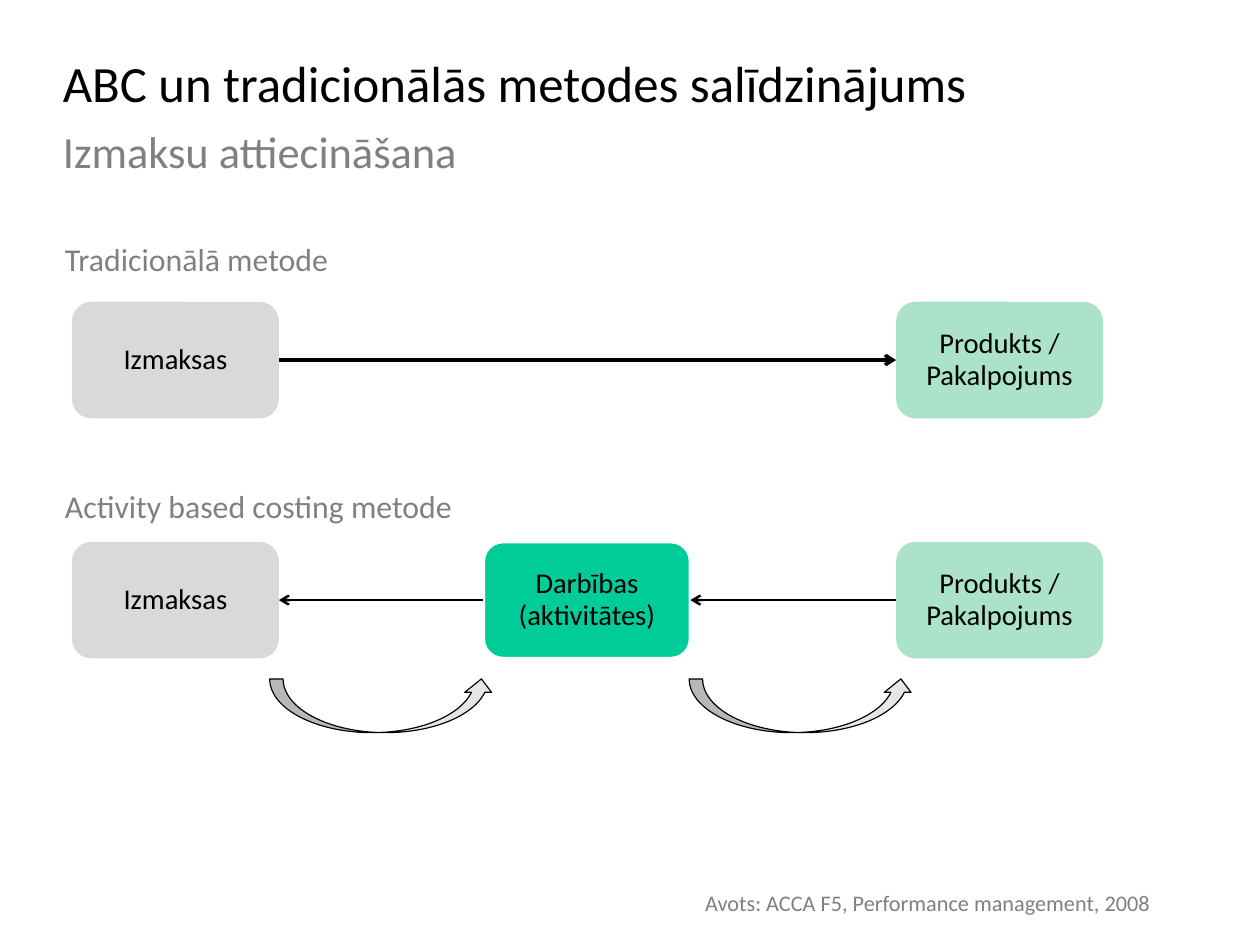
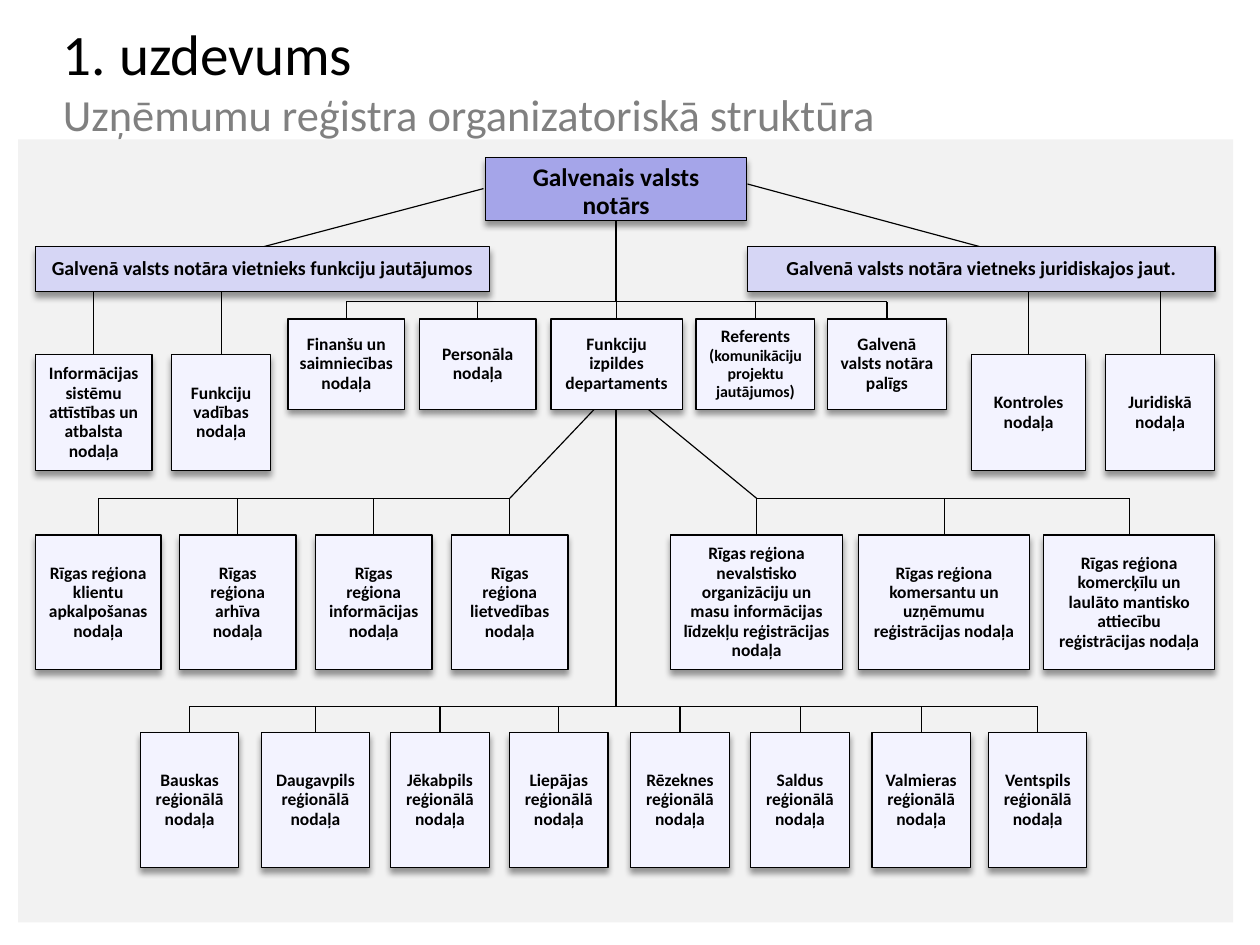
from lxml import etree
from pptx import Presentation
from pptx.dml.color import RGBColor
from pptx.enum.shapes import MSO_CONNECTOR, MSO_SHAPE
from pptx.enum.text import MSO_ANCHOR, MSO_AUTO_SIZE, PP_ALIGN
from pptx.oxml.ns import qn
from pptx.util import Inches, Pt

RECT, ROUNDED = MSO_SHAPE.RECTANGLE, MSO_SHAPE.ROUNDED_RECTANGLE
CURVED_ARROW = MSO_SHAPE.CURVED_UP_ARROW
STRAIGHT = MSO_CONNECTOR.STRAIGHT
MIDDLE, TOP = MSO_ANCHOR.MIDDLE, MSO_ANCHOR.TOP
LEFT, CENTER = PP_ALIGN.LEFT, PP_ALIGN.CENTER
NO_FIT = MSO_AUTO_SIZE.NONE

FONT = "Calibri"
CM_PER_INCH = 2.54
BLACK, WHITE, GREY = "000000", "FFFFFF", "808080"
COST, PRODUCT, ACTIVITY, CURVE = "D9D9D9", "AAE2CA", "00CC99", "E6E6E6"
PANEL, CHIEF, DEPUTY, UNIT = "F2F2F2", "A5A5E9", "D6D6F5", "F3F3FF"
LEFT_SITE, RIGHT_SITE = 1, 3


def rgb(value):
    """Return the colour for a hex string."""
    return RGBColor.from_string(value)


def style_runs(paragraph, size, color, bold=False):
    """Format every run of a paragraph."""
    for run in paragraph.runs:
        run.font.name = FONT
        run.font.size = Pt(size)
        run.font.bold = bold
        run.font.color.rgb = rgb(color)


def add_title(slide, heading, subheading, size, top, width, gap):
    """Fill the title placeholder with a heading and a grey subheading."""
    title = slide.shapes.title
    title.left, title.top = Inches(0.55), Inches(top)
    title.width, title.height = Inches(width), Inches(1.38)
    frame = title.text_frame
    frame.text = f"{heading}\n{subheading}"
    frame.auto_size, frame.vertical_anchor = NO_FIT, MIDDLE
    frame.margin_left = frame.margin_right = 0
    frame.margin_top = frame.margin_bottom = 0
    styles = ((size, BLACK, gap), (28, GREY, 6.6))
    for paragraph, (points, color, after) in zip(frame.paragraphs, styles):
        paragraph.alignment = LEFT
        paragraph.line_spacing = 1.01
        paragraph.space_after = Pt(after)
        style_runs(paragraph, points, color)
    return title


def add_caption(slide, text, left, top, width, size):
    """Add a grey line of text."""
    caption = slide.shapes.add_textbox(
        Inches(left), Inches(top), Inches(width), Inches(0.38))
    frame = caption.text_frame
    frame.word_wrap = True
    frame.text = text
    frame.paragraphs[0].line_spacing = 0.93
    style_runs(frame.paragraphs[0], size, GREY)


def add_block(slide, kind, area, fill, line=None, line_width=0.75):
    """Add a filled shape, outlined when a line colour is given."""
    block = slide.shapes.add_shape(kind, *map(Inches, area))
    block.shadow.inherit = False
    block.fill.solid()
    block.fill.fore_color.rgb = rgb(fill)
    if line:
        block.line.color.rgb = rgb(line)
        block.line.width = Pt(line_width)
    else:
        block.line.fill.background()
    return block


def label(block, text, size, bold=False, anchor=MIDDLE):
    """Centre black text in a block."""
    frame = block.text_frame
    frame.word_wrap = True
    frame.vertical_anchor = anchor
    frame.text = text
    paragraph = frame.paragraphs[0]
    paragraph.alignment = CENTER
    paragraph.line_spacing = 0.93
    style_runs(paragraph, size, BLACK, bold)


def add_drop_shadow(block):
    """Put a soft shadow below a block."""
    effects = block.element.spPr.find(qn("a:effectLst"))
    shadow = etree.SubElement(
        effects, qn("a:outerShdw"), blurRad=str(Pt(4)), dist=str(Pt(3)),
        dir="5400000", algn="t", rotWithShape="0")
    color = etree.SubElement(shadow, qn("a:srgbClr"), val=BLACK)
    etree.SubElement(color, qn("a:alpha"), val="40000")


def add_line(slide, start, end, width=0.75):
    """Draw a black line between two points."""
    line = slide.shapes.add_connector(STRAIGHT, *map(Inches, (*start, *end)))
    line.line.color.rgb = rgb(BLACK)
    line.line.width = Pt(width)
    etree.SubElement(line.element.spPr, qn("a:effectLst"))
    return line


def add_arrow(slide, source, source_site, target, target_site, width):
    """Draw an arrow glued to two blocks."""
    arrow = add_line(slide, (0, 0), (1, 1), width)
    arrow.begin_connect(source, source_site)
    arrow.end_connect(target, target_site)
    outline = arrow.element.spPr.find(qn("a:ln"))
    etree.SubElement(outline, qn("a:tailEnd"), type="arrow")


def add_step(slide, text, left, top, fill, line=None):
    """Add a rounded step of a costing method."""
    step = add_block(slide, ROUNDED, (left, top, 1.81, 1.02), fill, line, 2)
    label(step, text, 18)
    return step


def add_office(slide, text, area, fill=UNIT, size=11, anchor=MIDDLE):
    """Add a box of the organisation chart."""
    office = add_block(slide, RECT, area, fill, BLACK)
    add_drop_shadow(office)
    label(office, text, size, True, anchor)
    return office


def add_row(slide, units, top, height, branch_y, joined=True):
    """Add a row of offices hanging from a branch; return them."""
    centers = [left + width / 2 for left, width, _ in units]
    if joined:
        add_line(slide, (centers[0], branch_y), (centers[-1], branch_y))
    for center in centers:
        add_line(slide, (center, branch_y), (center, top))
    return [add_office(slide, text, (left, top, width, height))
            for left, width, text in units]


def build_comparison(slide):
    """Compare the two ways of assigning costs."""
    add_title(slide, "ABC un tradicionālās metodes salīdzinājums",
              "Izmaksu attiecināšana", 32, 0.31, 10.47, 6.6)
    add_caption(slide, "Tradicionālā metode", 0.47, 2.08, 9.92, 20)
    add_caption(slide, "Activity based costing metode", 0.47, 4.24, 9.92, 20)
    add_caption(slide, "Avots: ACCA F5, Performance management, 2008",
                6.07, 7.75, 4.72, 14)

    ends = [(add_step(slide, "Izmaksas", 0.63, top, COST),
             add_step(slide, "Produkts / Pakalpojums", 7.84, top, PRODUCT))
            for top in (2.64, 4.74)]
    activities = add_step(
        slide, "Darbības (aktivitātes)", 4.23, 4.74, ACTIVITY, WHITE)
    (old_cost, old_product), (cost, product) = ends
    add_arrow(slide, old_cost, RIGHT_SITE, old_product, LEFT_SITE, 2.25)
    add_arrow(slide, activities, LEFT_SITE, cost, RIGHT_SITE, 1.5)
    add_arrow(slide, product, LEFT_SITE, activities, RIGHT_SITE, 1.5)
    for left in (2.36, 6.03):
        add_block(slide, CURVED_ARROW, (left, 5.94, 1.97, 0.47), CURVE, BLACK)


def build_organisation(slide):
    """Draw the organisation chart of the register."""
    title = add_title(slide, "1. uzdevums",
                      "Uzņēmumu reģistra organizatoriskā struktūra",
                      36, 0, 9.92, 0)
    panel = add_block(slide, RECT, (0.16, 1.22, 10.63, 6.85), PANEL)
    title.element.addprevious(panel.element)

    for start, end in (((6.54, 1.61), (8.58, 2.16)),
                       ((4.23, 1.65), (2.3, 2.16)),
                       ((5.39, 1.93), (5.39, 2.64)),
                       ((5.39, 3.58), (5.39, 6.18)),
                       ((5.2, 3.58), (4.46, 4.36)),
                       ((5.67, 3.58), (6.62, 4.36))):
        add_line(slide, start, end)

    add_office(slide, "Galvenais valsts notārs", (4.25, 1.38, 2.28, 0.55),
               CHIEF, 16, TOP)
    add_office(slide, "Galvenā valsts notāra vietnieks funkciju jautājumos",
               (0.31, 2.16, 3.97, 0.39), DEPUTY, 12.5)
    add_office(slide, "Galvenā valsts notāra vietneks juridiskajos jaut.",
               (6.54, 2.16, 4.09, 0.39), DEPUTY, 12.5)

    deputy_units = [
        (0.31, 1.02, "Informācijas sistēmu attīstības un atbalsta nodaļa"),
        (1.5, 0.87, "Funkciju vadības nodaļa"),
        (8.5, 1, "Kontroles nodaļa"),
        (9.67, 0.96, "Juridiskā nodaļa")]
    add_row(slide, deputy_units, 3.1, 1.02, 2.55, joined=False)

    staff = [
        (2.52, 1.02, "Finanšu un saimniecības nodaļa"),
        (3.67, 1.02, "Personāla nodaļa"),
        (4.82, 1.15, "Funkciju izpildes departaments"),
        (6.09, 1.04, "Referents "),
        (7.24, 1.04, "Galvenā valsts notāra palīgs")]
    adviser = add_row(slide, staff, 2.79, 0.79, 2.64)[3]
    duty = adviser.text_frame.paragraphs[0]
    for text, size in (("(", 10.5), ("komunikāciju projektu jautājumos", 10),
                       (")", 10.5)):
        run = duty.add_run()
        run.text = text
        run.font.name, run.font.size, run.font.bold = FONT, Pt(size), True
        run.font.color.rgb = rgb(BLACK)

    riga_services = [(0.31, 1.1, "klientu apkalpošanas"),
                     (1.57, 1.02, "arhīva"),
                     (2.76, 1.02, "informācijas"),
                     (3.95, 1.02, "lietvedības")]
    riga_registers = [
        (5.87, 1.5, "nevalstisko organizāciju un masu informācijas "
                    "līdzekļu reģistrācijas"),
        (7.51, 1.5, "komersantu un uzņēmumu reģistrācijas"),
        (9.13, 1.5, "komercķīlu un laulāto mantisko attiecību "
                    "reģistrācijas")]
    for group in (riga_services, riga_registers):
        units = [(left, width, f"Rīgas reģiona {field} nodaļa")
                 for left, width, field in group]
        add_row(slide, units, 4.68, 1.18, 4.36)

    regions = [(1.23, 0.86, "Bauskas"), (2.29, 0.94, "Daugavpils"),
               (3.42, 0.86, "Jēkabpils"), (4.46, 0.86, "Liepājas"),
               (5.52, 0.86, "Rēzeknes"), (6.57, 0.86, "Saldus"),
               (7.63, 0.86, "Valmieras"), (8.65, 0.86, "Ventspils")]
    units = [(left, width, f"{city} reģionālā nodaļa")
             for left, width, city in regions]
    add_row(slide, units, 6.41, 1.18, 6.18)


def main():
    """Build both slides and save them."""
    deck = Presentation()
    deck.slide_width = Inches(28 / CM_PER_INCH)
    deck.slide_height = Inches(21 / CM_PER_INCH)
    title_only = deck.slide_layouts[5]
    for build in (build_comparison, build_organisation):
        build(deck.slides.add_slide(title_only))
    deck.save("out.pptx")


if __name__ == "__main__":
    main()
